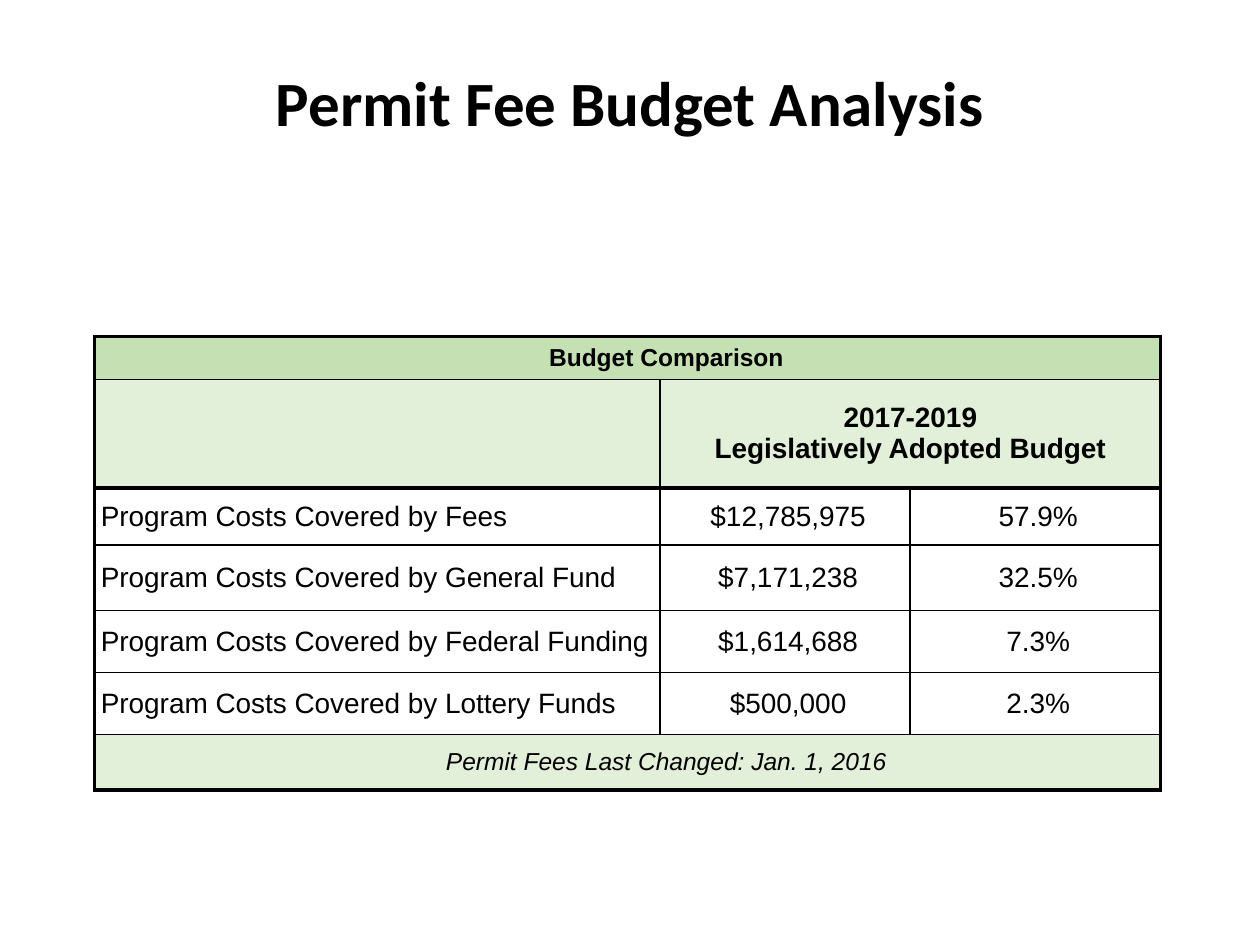
from pptx import Presentation
from pptx.dml.color import RGBColor
from pptx.enum.text import MSO_ANCHOR, PP_ALIGN
from pptx.oxml import parse_xml
from pptx.oxml.ns import nsdecls
from pptx.util import Inches, Pt

BLACK = RGBColor(0x00, 0x00, 0x00)
GREEN = RGBColor(0xC5, 0xE0, 0xB3)
PALE_GREEN = RGBColor(0xE2, 0xEF, 0xD9)
THIN, MEDIUM, THICK = 1, 1.5, 2.25

COL_WEIGHTS = (4.49, 1.98, 1.99)
ROW_WEIGHTS = (0.34, 0.86, 0.45, 0.52, 0.49, 0.49, 0.44)
COSTS = (
    ("Program Costs Covered by Fees", "$12,785,975", "57.9%"),
    ("Program Costs Covered by General Fund", "$7,171,238", "32.5%"),
    ("Program Costs Covered by Federal Funding", "$1,614,688", "7.3%"),
    ("Program Costs Covered by Lottery Funds", "$500,000", "2.3%"),
)


def share_box(prs, left, top, width, height):
    """Turn shares of the slide's size into a box in EMU."""
    w, h = prs.slide_width, prs.slide_height
    return int(left * w), int(top * h), int(width * w), int(height * h)


def set_borders(cell, *widths):
    """Draw the left, right, top and bottom borders, in points."""
    tc_pr = cell._tc.get_or_add_tcPr()
    for side, width in zip("LRTB", widths):
        tc_pr.append(parse_xml(
            f'<a:ln{side} {nsdecls("a")} w="{Pt(width)}"><a:solidFill>'
            f'<a:srgbClr val="{BLACK}"/></a:solidFill></a:ln{side}>'))


def set_text(tf, text, size, font="Arial", align=PP_ALIGN.CENTER,
             bold=False, italic=False):
    tf.text = text
    for p in tf.paragraphs:
        p.alignment = align
        p.font.name, p.font.size = font, Pt(size)
        p.font.bold, p.font.italic = bold, italic
        p.font.color.rgb = BLACK


def fill_cell(cell, text="", size=16, indent=0, color=None, **style):
    cell.vertical_anchor = MSO_ANCHOR.MIDDLE
    cell.margin_right = cell.margin_top = cell.margin_bottom = 0
    cell.margin_left = Inches(indent)
    if color is None:
        cell.fill.background()
    else:
        cell.fill.solid()
        cell.fill.fore_color.rgb = color
    set_text(cell.text_frame, text, size, **style)


def add_title(slide, box):
    tf = slide.shapes.add_textbox(*box).text_frame
    tf.word_wrap = True
    set_text(tf, "Permit Fee Budget Analysis", 36, font="Calibri", bold=True)
    tf.paragraphs[0].space_before = Pt(2)


def add_budget_table(slide, box):
    n_rows, n_cols = len(ROW_WEIGHTS), len(COL_WEIGHTS)
    table = slide.shapes.add_table(n_rows, n_cols, *box).table
    table.first_row = table.horz_banding = False
    for col, weight in zip(table.columns, COL_WEIGHTS):
        col.width = int(box[2] * weight / sum(COL_WEIGHTS))
    for row, weight in zip(table.rows, ROW_WEIGHTS):
        row.height = int(box[3] * weight / sum(ROW_WEIGHTS))

    last = n_rows - 1
    for r in range(n_rows):
        banner = r in (0, last)
        for c in range(n_cols):
            set_borders(table.cell(r, c),
                        THICK if c == 0 else MEDIUM,
                        THICK if banner else MEDIUM,
                        THICK if r in (0, 2) else THIN,
                        THICK if r in (1, last) else THIN)

    for r in (0, last):
        table.cell(r, 0).merge(table.cell(r, n_cols - 1))
    table.cell(1, 1).merge(table.cell(1, n_cols - 1))

    fill_cell(table.cell(0, 0), "Budget Comparison", 14, 0.62, GREEN, bold=True)
    fill_cell(table.cell(1, 0), color=PALE_GREEN)
    fill_cell(table.cell(1, 1), "2017-2019\nLegislatively Adopted Budget",
              color=PALE_GREEN, bold=True)
    for r, values in enumerate(COSTS, start=2):
        for c, value in enumerate(values):
            fill_cell(table.cell(r, c), value, indent=0.05,
                      align=PP_ALIGN.CENTER if c else PP_ALIGN.LEFT)
    fill_cell(table.cell(last, 0), "Permit Fees Last Changed: Jan. 1, 2016",
              14, 0.62, PALE_GREEN, italic=True)


def main():
    prs = Presentation()
    prs.slide_width, prs.slide_height = Inches(10), Inches(7.5)
    slide = prs.slides.add_slide(prs.slide_layouts[6])
    add_budget_table(slide, share_box(prs, 0.075, 0.356, 0.846, 0.48))
    add_title(slide, share_box(prs, 0, 0.061, 1, 0.095))
    prs.save("out.pptx")


if __name__ == "__main__":
    main()
